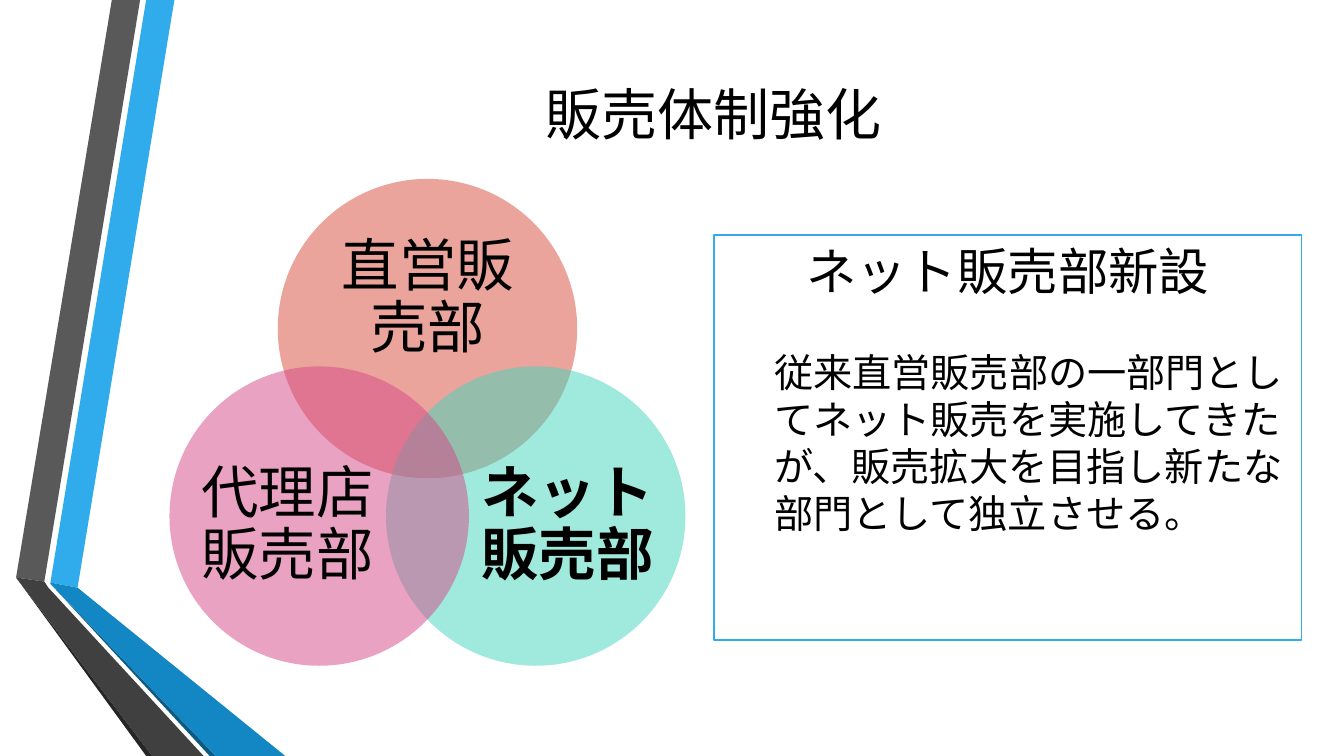
from math import cos, radians, sin

from lxml import etree
from pptx import Presentation
from pptx.dml.color import RGBColor
from pptx.enum import shapes, text
from pptx.oxml import ns
from pptx.util import Inches, Pt

# Content
TITLE = "販売体制強化"
NEWS_HEADING = "ネット販売部新設"
NEWS_BODY = ("従来直営販売部の一部門としてネット販売を実施してきたが、"
             "販売拡大を目指し新たな部門として独立させる。")
# Name, colour, angle round the centre, bold, label box within the circle
DEPARTMENTS = [
    ("直営販売部", "coral", -90, False, (0.4, 0.52, 2.18, 1.34)),
    ("ネット販売部", "mint", 30, True, (0.91, 0.76, 1.78, 1.64)),
    ("代理店販売部", "pink", 150, False, (0.28, 0.76, 1.78, 1.64)),
]
COLORS = {
    "text": "000000", "panel": "FFFFFF", "sky": "30ACEC", "blue": "1287C3",
    "navy": "0C5A82", "grey": "595959", "charcoal": "404040", "dark": "262626",
    "coral": "D64A3B", "mint": "41D6BC", "pink": "D64787",
}
RIBBONS = [
    ("sky", [(0.5, 5.78), (0.77, 5.83), (1.73, 0), (1.45, 0)]),
    ("grey", [(1.39, 0), (1.11, 0), (0.16, 5.73), (0.44, 5.77)]),
    ("dark", [(0.16, 5.73), (1.45, 7.5), (1.51, 7.5)]),
    ("navy", [(0.5, 5.79), (2.08, 7.5), (2.14, 7.5)]),
    ("blue", [(0.5, 5.79), (2.14, 7.5), (2.83, 7.5), (0.77, 5.83), (0.5, 5.78)]),
    ("charcoal", [(2.02, 7.5), (0.48, 5.83), (0.44, 5.77), (0.16, 5.73), (1.51, 7.5)]),
]
VENN_X, VENN_Y, VENN_RADIUS, DIAMETER = 4.24, 4.5, 1.24, 2.97


def color(name):
    return RGBColor.from_string(COLORS[name])


def paint(shape, name, alpha=None):
    shape.shadow.inherit = False
    shape.fill.solid()
    shape.fill.fore_color.rgb = color(name)
    shape.line.fill.background()
    if alpha:
        rgb = shape.fill._xPr.find(".//" + ns.qn("a:srgbClr"))
        etree.SubElement(rgb, ns.qn("a:alpha"), val=str(alpha * 1000))


def write(paragraph, words, size, font, align=text.PP_ALIGN.CENTER, bold=False):
    paragraph.text = words
    paragraph.alignment = align
    paragraph.font.size = Pt(size)
    paragraph.font.name = font
    paragraph.font.bold = bold
    paragraph.font.color.rgb = color("text")


prs = Presentation()
prs.slide_width, prs.slide_height = Inches(13.33), Inches(7.5)
slide = prs.slides.add_slide(prs.slide_layouts[5])

# Folded ribbons at the left edge
for name, points in RIBBONS:
    start, *rest = [(Inches(x), Inches(y)) for x, y in points]
    outline = slide.shapes.build_freeform(*start)
    outline.add_line_segments(rest, close=True)
    paint(outline.convert_to_shape(), name)

# Title
title = slide.shapes.title
title.left, title.top = Inches(1.6), Inches(0.16)
title.width, title.height = Inches(10.96), Inches(1.92)
title.text_frame.vertical_anchor = text.MSO_ANCHOR.MIDDLE
write(title.text_frame.paragraphs[0], TITLE, 40, "Noto Sans CJK JP")

# Announcement panel
panel = slide.shapes.add_shape(shapes.MSO_SHAPE.RECTANGLE, Inches(7.08), Inches(2.33),
                               Inches(5.83), Inches(4.02))
paint(panel, "panel")
panel.line.color.rgb = color("sky")
panel.line.width = Pt(1.25)
news = panel.text_frame
news.word_wrap = True
news.vertical_anchor = text.MSO_ANCHOR.TOP
write(news.paragraphs[0], NEWS_HEADING, 36, "Calibri")
detail = news.add_paragraph()
write(detail, NEWS_BODY, 28, "Calibri", text.PP_ALIGN.LEFT)
detail.space_before = Pt(34)
detail._p.get_or_add_pPr().set("marL", str(Inches(0.5)))

# Three overlapping departments
for name, tint, angle, bold, (dx, dy, width, height) in DEPARTMENTS:
    left = VENN_X + VENN_RADIUS * cos(radians(angle)) - DIAMETER / 2
    top = VENN_Y + VENN_RADIUS * sin(radians(angle)) - DIAMETER / 2
    circle = slide.shapes.add_shape(shapes.MSO_SHAPE.OVAL, Inches(left), Inches(top),
                                    Inches(DIAMETER), Inches(DIAMETER))
    paint(circle, tint, alpha=50)
    label = slide.shapes.add_textbox(Inches(left + dx), Inches(top + dy),
                                     Inches(width), Inches(height)).text_frame
    label.word_wrap = True
    label.vertical_anchor = text.MSO_ANCHOR.MIDDLE
    label.margin_left = label.margin_right = label.margin_top = label.margin_bottom = 0
    write(label.paragraphs[0], name, 41, "Arial", bold=bold)
    label.paragraphs[0].line_spacing = 0.9

prs.save("out.pptx")
